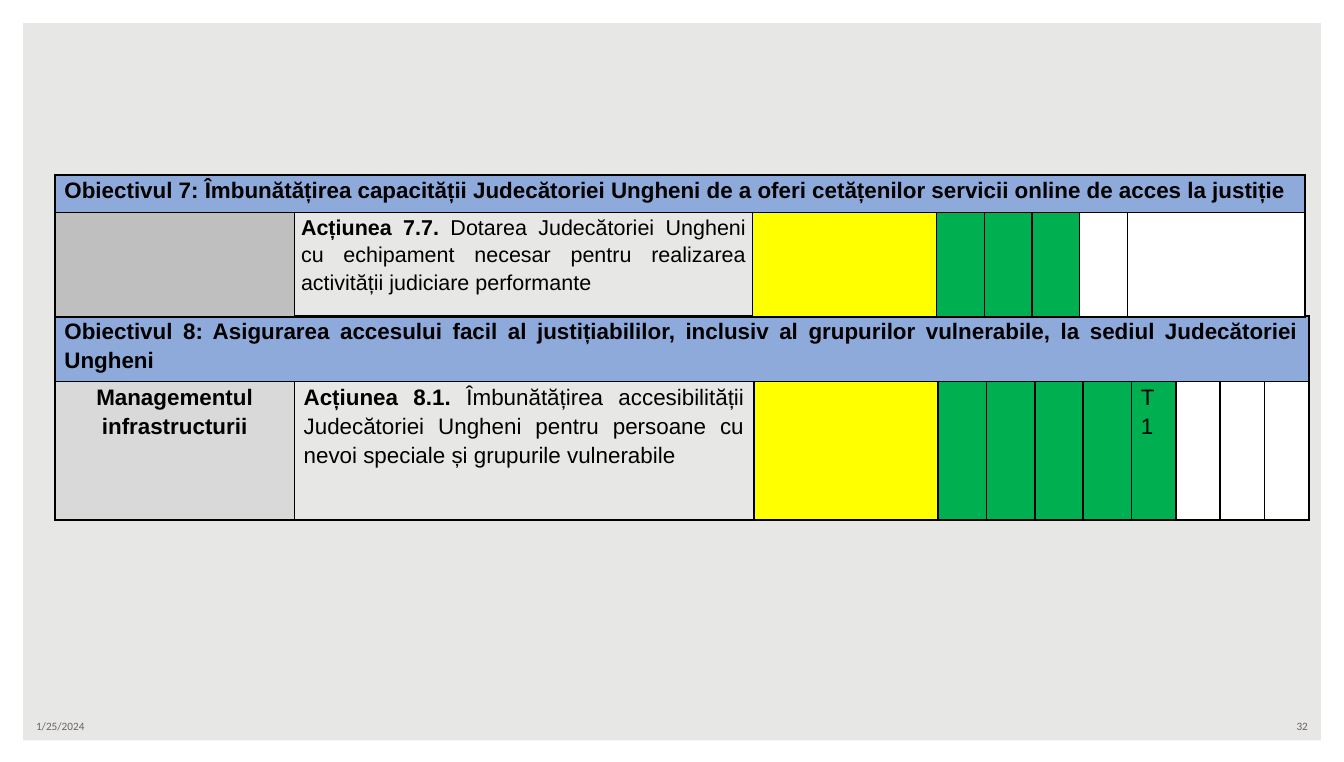
import pptx
import pptx.util
from lxml import etree
from pptx.dml.color import RGBColor
from pptx.enum.shapes import MSO_SHAPE
from pptx.enum.text import MSO_ANCHOR, PP_ALIGN
from pptx.oxml.ns import qn
from pptx.util import Inches

BLUE, YELLOW, GREEN, WHITE = "8EAADB", "FFFF00", "00B050", "FFFFFF"
LEFT, CENTER, JUSTIFY = PP_ALIGN.LEFT, PP_ALIGN.CENTER, PP_ALIGN.JUSTIFY

# A cell is (fill, bold text, plain text, alignment); a blank cell is its fill alone.
OBJECTIVE_7 = (BLUE, "Obiectivul 7: Îmbunătățirea capacității Judecătoriei Ungheni de a oferi "
               "cetățenilor servicii online de acces la justiție", "", JUSTIFY)
ACTION_7_7 = (None, "Acțiunea 7.7.", " Dotarea Judecătoriei Ungheni cu echipament necesar "
              "pentru realizarea activității judiciare performante", JUSTIFY)
OBJECTIVE_8 = (BLUE, "Obiectivul 8: Asigurarea accesului facil al justițiabililor, inclusiv al "
               "grupurilor vulnerabile, la sediul Judecătoriei Ungheni", "", JUSTIFY)
INFRASTRUCTURE = ("D9D9D9", "Managementul infrastructurii", "", CENTER)
ACTION_8_1 = (None, "Acțiunea 8.1.", " Îmbunătățirea accesibilității Judecătoriei Ungheni "
              "pentru persoane cu nevoi speciale și grupurile vulnerabile", JUSTIFY)
TERM_1 = (GREEN, "", "T1", LEFT)

# A row with a single cell spans all columns of its table.
PLAN = [
    dict(top=2.35, columns=[1.78, 3.42, 1.37] + [0.36] * 4 + [0.33] * 4, heights=[0.49, 1.03],
         size=12, inset=0.07, after=12,
         rows=[[OBJECTIVE_8],
               [INFRASTRUCTURE, ACTION_8_1, YELLOW] + [GREEN] * 4 + [TERM_1] + [WHITE] * 3]),
    dict(top=1.58, columns=[1.78, 3.41, 1.37] + [0.355] * 4 + [1.32], heights=[0.78],
         size=11.5, inset=0.05, after=0,
         rows=[["BFBFBF", ACTION_7_7, YELLOW] + [GREEN] * 3 + [WHITE] * 2]),
    dict(top=1.3, columns=[9.3], heights=[0.28], size=12, inset=0.07, after=12,
         rows=[[OBJECTIVE_7]]),
]
FOOTERS = [("1/25/2024", 0.17, LEFT), ("32", 7.5, PP_ALIGN.RIGHT)]


def paint(color_format, color):
    if color is None:
        color_format.background()
    else:
        color_format.solid()
        color_format.fore_color.rgb = RGBColor.from_string(color)


def style_run(run, font, size, color, bold=False):
    run.font.name = font
    run.font.size = pptx.util.Pt(size)
    run.font.bold = bold
    run.font.color.rgb = RGBColor.from_string(color)


def outline(cell):
    """Draw a 1 pt black border on all four sides of a cell."""
    properties = cell._tc.get_or_add_tcPr()
    for side in ("a:lnL", "a:lnR", "a:lnT", "a:lnB"):
        line = etree.SubElement(properties, qn(side), w=str(pptx.util.Pt(1)))
        solid = etree.SubElement(line, qn("a:solidFill"))
        etree.SubElement(solid, qn("a:srgbClr"), val="000000")


def fill_cell(cell, content, part):
    if isinstance(content, str):
        paint(cell.fill, content)
        return
    color, bold_text, plain_text, alignment = content
    paint(cell.fill, color)
    cell.margin_left = cell.margin_right = Inches(part["inset"])
    cell.margin_top = cell.margin_bottom = 0
    paragraph = cell.text_frame.paragraphs[0]
    paragraph.alignment = alignment
    paragraph.line_spacing = 1.15
    paragraph.space_after = pptx.util.Pt(part["after"])
    for text, bold in ((bold_text, True), (plain_text, False)):
        if text:
            run = paragraph.add_run()
            run.text = text
            style_run(run, "Arial", part["size"], "000000", bold)


def add_plan_table(slide, part):
    columns, heights = part["columns"], part["heights"]
    table = slide.shapes.add_table(
        len(heights), len(columns), Inches(0.41), Inches(part["top"]),
        Inches(sum(columns)), Inches(sum(heights))).table
    table.first_row = table.horz_banding = False
    for column, width in zip(table.columns, columns):
        column.width = Inches(width)
    for row, height in zip(table.rows, heights):
        row.height = Inches(height)
    for cell in table.iter_cells():
        outline(cell)
    for r, contents in enumerate(part["rows"]):
        if len(contents) < len(columns):
            table.cell(r, 0).merge(table.cell(r, len(columns) - 1))
        for c, content in enumerate(contents):
            fill_cell(table.cell(r, c), content, part)


def add_footer(slide, text, left, alignment):
    box = slide.shapes.add_textbox(Inches(left), Inches(5.3), Inches(2.33), Inches(0.2))
    frame = box.text_frame
    frame.word_wrap = True
    frame.vertical_anchor = MSO_ANCHOR.MIDDLE
    frame.text = text
    frame.paragraphs[0].alignment = alignment
    style_run(frame.paragraphs[0].runs[0], "Calibri", 6, "6C6463")


def main():
    deck = pptx.Presentation()
    deck.slide_width, deck.slide_height = Inches(10), Inches(5.67)
    slide = deck.slides.add_slide(deck.slide_layouts[6])
    paint(slide.background.fill, "E7E7E5")

    border = slide.shapes.add_shape(MSO_SHAPE.FRAME, 0, 0, deck.slide_width, Inches(5.68))
    border.adjustments[0] = 0.03
    border.shadow.inherit = False
    paint(border.fill, WHITE)
    border.line.fill.background()

    for footer in FOOTERS:
        add_footer(slide, *footer)
    for part in PLAN:
        add_plan_table(slide, part)
    deck.save("out.pptx")


if __name__ == "__main__":
    main()
